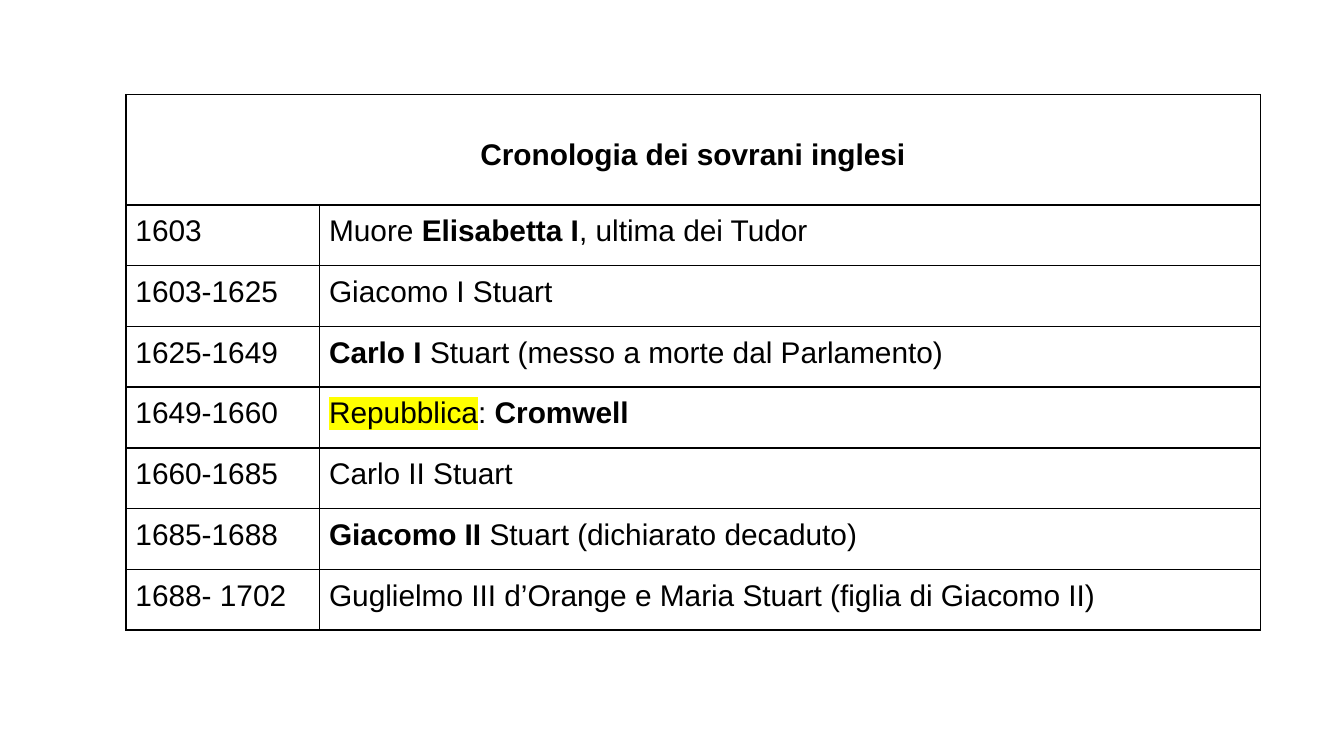
from lxml.etree import SubElement
from pptx import Presentation
from pptx.dml.color import RGBColor
from pptx.enum.text import MSO_ANCHOR as Anchor, PP_ALIGN as Align
from pptx.oxml.ns import qn
from pptx.util import Cm, Pt

BLACK, YELLOW = "000000", "FFFF00"
TITLE = "Cronologia dei sovrani inglesi"
COLUMN_WIDTHS = (3.66, 17.78)
TITLE_HEIGHT, ROW_HEIGHT = 2.08, 1.15

# Each reign: years, then (text, style) spans
REIGNS = [
    ("1603", [("Muore ", ""), ("Elisabetta I", "bold"), (", ultima dei Tudor", "")]),
    ("1603-1625", [("Giacomo I Stuart", "")]),
    ("1625-1649", [("Carlo I", "bold"), (" Stuart (messo a morte dal Parlamento)", "")]),
    ("1649-1660", [("Repubblica", "marked"), (": ", ""), ("Cromwell", "bold")]),
    ("1660-1685", [("Carlo II Stuart", "")]),
    ("1685-1688", [("Giacomo II", "bold"), (" Stuart (dichiarato decaduto)", "")]),
    ("1688- 1702", [("Guglielmo III d’Orange e Maria Stuart (figlia di Giacomo II)", "")]),
]


def color(value):
    return RGBColor.from_string(value)


def highlight(span, value):
    mark = SubElement(span.font._element, qn("a:highlight"))
    SubElement(mark, qn("a:srgbClr"), val=value)


def add_borders(cell):
    properties = cell._tc.get_or_add_tcPr()
    for index, side in enumerate(("lnL", "lnR", "lnT", "lnB")):
        line = SubElement(properties, qn(f"a:{side}"), w=str(Pt(1)))
        fill = SubElement(line, qn("a:solidFill"))
        SubElement(fill, qn("a:srgbClr"), val=BLACK)
        properties.insert(index, line)  # borders precede the cell fill


def write_cell(cell, spans, align=Align.JUSTIFY, anchor=Anchor.TOP):
    cell.fill.background()
    add_borders(cell)
    cell.margin_left = cell.margin_right = Cm(0.18)
    cell.margin_top = cell.margin_bottom = 0
    cell.vertical_anchor = anchor
    para = cell.text_frame.paragraphs[0]
    para.alignment, para.line_spacing = align, 1.3
    para.font.name, para.font.size = "Arial", Pt(16)
    para.font.color.rgb = color(BLACK)
    for text, style in spans:
        span = para.add_run()
        span.text = text
        span.font.bold = style == "bold"
        if style == "marked":
            highlight(span, YELLOW)


def add_chronology(page):
    height = TITLE_HEIGHT + ROW_HEIGHT * len(REIGNS)
    frame = page.shapes.add_table(len(REIGNS) + 1, 2, Cm(2.38), Cm(1.79),
                                  Cm(sum(COLUMN_WIDTHS)), Cm(height))
    table = frame.table
    table.first_row = table.horz_banding = False
    for column, width in zip(table.columns, COLUMN_WIDTHS):
        column.width = Cm(width)
    for row in table.rows:
        row.height = Cm(ROW_HEIGHT)
    table.rows[0].height = Cm(TITLE_HEIGHT)

    # Title row across both columns
    title = table.cell(0, 0)
    title.merge(table.cell(0, 1))
    write_cell(title, [(TITLE, "bold")], Align.CENTER, Anchor.MIDDLE)
    add_borders(table.cell(0, 1))

    # One row per reign
    for row, (years, event) in enumerate(REIGNS, start=1):
        write_cell(table.cell(row, 0), [(years, "")])
        write_cell(table.cell(row, 1), event)


def main():
    deck = Presentation()
    deck.slide_width, deck.slide_height = Cm(25.4), Cm(14.29)
    page = deck.slides.add_slide(deck.slide_layouts[6])
    add_chronology(page)
    deck.save("out.pptx")


if __name__ == "__main__":
    main()
